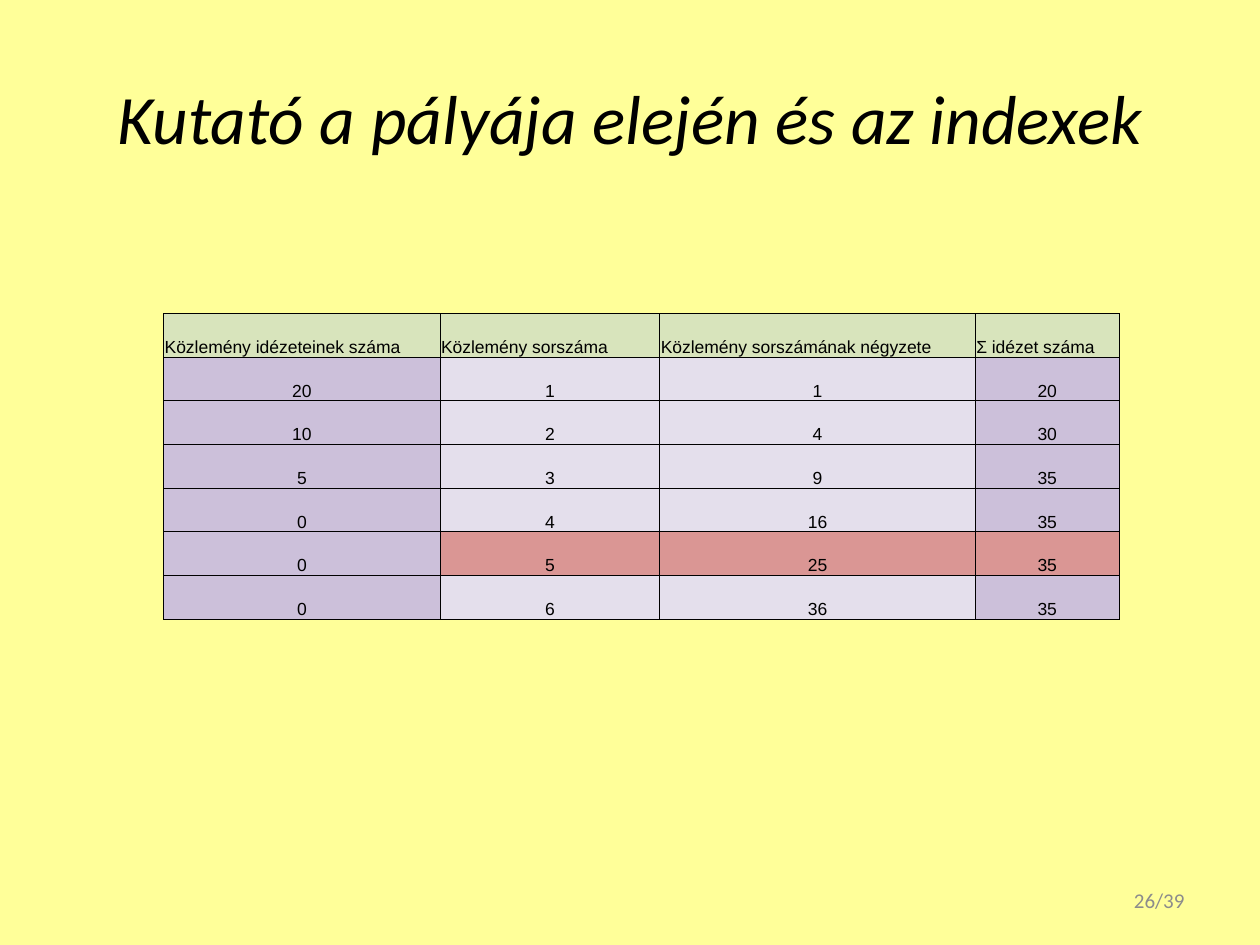
from dataclasses import dataclass

from lxml import etree
from pptx import Presentation
from pptx.dml.color import RGBColor
from pptx.enum.text import MSO_ANCHOR, MSO_AUTO_SIZE, PP_ALIGN
from pptx.oxml.ns import qn
from pptx.util import Cm, Pt

LEFT, CENTER, RIGHT = PP_ALIGN.LEFT, PP_ALIGN.CENTER, PP_ALIGN.RIGHT
MIDDLE, BOTTOM = MSO_ANCHOR.MIDDLE, MSO_ANCHOR.BOTTOM
NO_AUTOFIT = MSO_AUTO_SIZE.NONE

COLORS = {
    "background": "FFFF99",
    "text": "000000",
    "page": "8C8C8C",
    "border": "000000",
    "header": "D8E4BC",
    "citations": "CCC0DA",
    "rank": "E4DFEC",
    "highlight": "DA9694",
}


@dataclass
class Column:
    heading: str
    width: float
    fill: str
    highlighted: bool


@dataclass
class TextStyle:
    font: str
    size: float
    color: str
    alignment: PP_ALIGN
    italic: bool = False


COLUMNS = [
    Column("Közlemény idézeteinek száma", 5.57, "citations", False),
    Column("Közlemény sorszáma", 4.43, "rank", True),
    Column("Közlemény sorszámának négyzete", 6.36, "rank", True),
    Column("Σ idézet száma", 2.9, "citations", True),
]
CITATIONS = [20, 10, 5, 0, 0, 0]
HIGHLIGHTED_RANK = 5
ROW_HEIGHT = 0.88

TITLE_STYLE = TextStyle("Calibri", 39.6, "text", CENTER, italic=True)
HEADING_STYLE = TextStyle("Arial", 10, "text", LEFT)
VALUE_STYLE = TextStyle("Arial", 10, "text", CENTER)
PAGE_STYLE = TextStyle("Calibri", 12, "page", RIGHT)


def write_text(text_frame, text: str, style: TextStyle) -> None:
    text_frame.text = text
    paragraph = text_frame.paragraphs[0]
    paragraph.alignment = style.alignment
    for run in paragraph.runs:
        run.font.name = style.font
        run.font.size = Pt(style.size)
        run.font.italic = style.italic
        run.font.color.rgb = RGBColor.from_string(COLORS[style.color])


def add_borders(cell) -> None:
    properties = cell._tc.get_or_add_tcPr()
    for position, side in enumerate(("lnL", "lnR", "lnT", "lnB")):
        line = etree.Element(qn(f"a:{side}"), w=str(Pt(0.5)))
        fill = etree.SubElement(line, qn("a:solidFill"))
        etree.SubElement(fill, qn("a:srgbClr"), val=COLORS["border"])
        properties.insert(position, line)


def write_cell(cell, text: str, style: TextStyle, fill: str) -> None:
    write_text(cell.text_frame, text, style)
    cell.vertical_anchor = BOTTOM
    cell.margin_left = cell.margin_right = cell.margin_top = Cm(0.02)
    cell.margin_bottom = 0
    cell.fill.solid()
    cell.fill.fore_color.rgb = RGBColor.from_string(COLORS[fill])
    add_borders(cell)


def add_index_table(slide) -> None:
    """Tabulate citations, rank, squared rank and running citation total."""
    row_count = len(CITATIONS) + 1
    table_width = sum(column.width for column in COLUMNS)
    table = slide.shapes.add_table(
        row_count, len(COLUMNS), Cm(3.3), Cm(6.32),
        Cm(table_width), Cm(ROW_HEIGHT * row_count),
    ).table
    for row in table.rows:
        row.height = Cm(ROW_HEIGHT)
    for index, column in enumerate(COLUMNS):
        table.columns[index].width = Cm(column.width)
        write_cell(table.cell(0, index), column.heading, HEADING_STYLE, "header")

    total = 0
    for rank, citations in enumerate(CITATIONS, start=1):
        total += citations
        values = (citations, rank, rank ** 2, total)
        for index, (column, value) in enumerate(zip(COLUMNS, values)):
            highlighted = rank == HIGHLIGHTED_RANK and column.highlighted
            fill = "highlight" if highlighted else column.fill
            write_cell(table.cell(rank, index), str(value), VALUE_STYLE, fill)


def add_title(slide, text: str) -> None:
    title = slide.shapes.title
    title.left, title.top = Cm(1.27), Cm(0.76)
    title.width, title.height = Cm(22.86), Cm(3.18)
    write_text(title.text_frame, text, TITLE_STYLE)
    title.text_frame.auto_size = NO_AUTOFIT
    title.text_frame.vertical_anchor = MIDDLE


def add_page_number(slide, text: str) -> None:
    text_box = slide.shapes.add_textbox(Cm(18.2), Cm(17.65), Cm(5.93), Cm(1.01))
    text_box.text_frame.word_wrap = True
    text_box.text_frame.vertical_anchor = MIDDLE
    write_text(text_box.text_frame, text, PAGE_STYLE)


def main() -> None:
    presentation = Presentation()
    presentation.slide_width, presentation.slide_height = Cm(25.4), Cm(19.05)
    title_only_layout = presentation.slide_layouts[5]
    slide = presentation.slides.add_slide(title_only_layout)
    slide.background.fill.solid()
    slide.background.fill.fore_color.rgb = RGBColor.from_string(COLORS["background"])
    add_title(slide, "Kutató a pályája elején és az indexek")
    add_index_table(slide)
    add_page_number(slide, "26/39")
    presentation.save("out.pptx")


if __name__ == "__main__":
    main()
